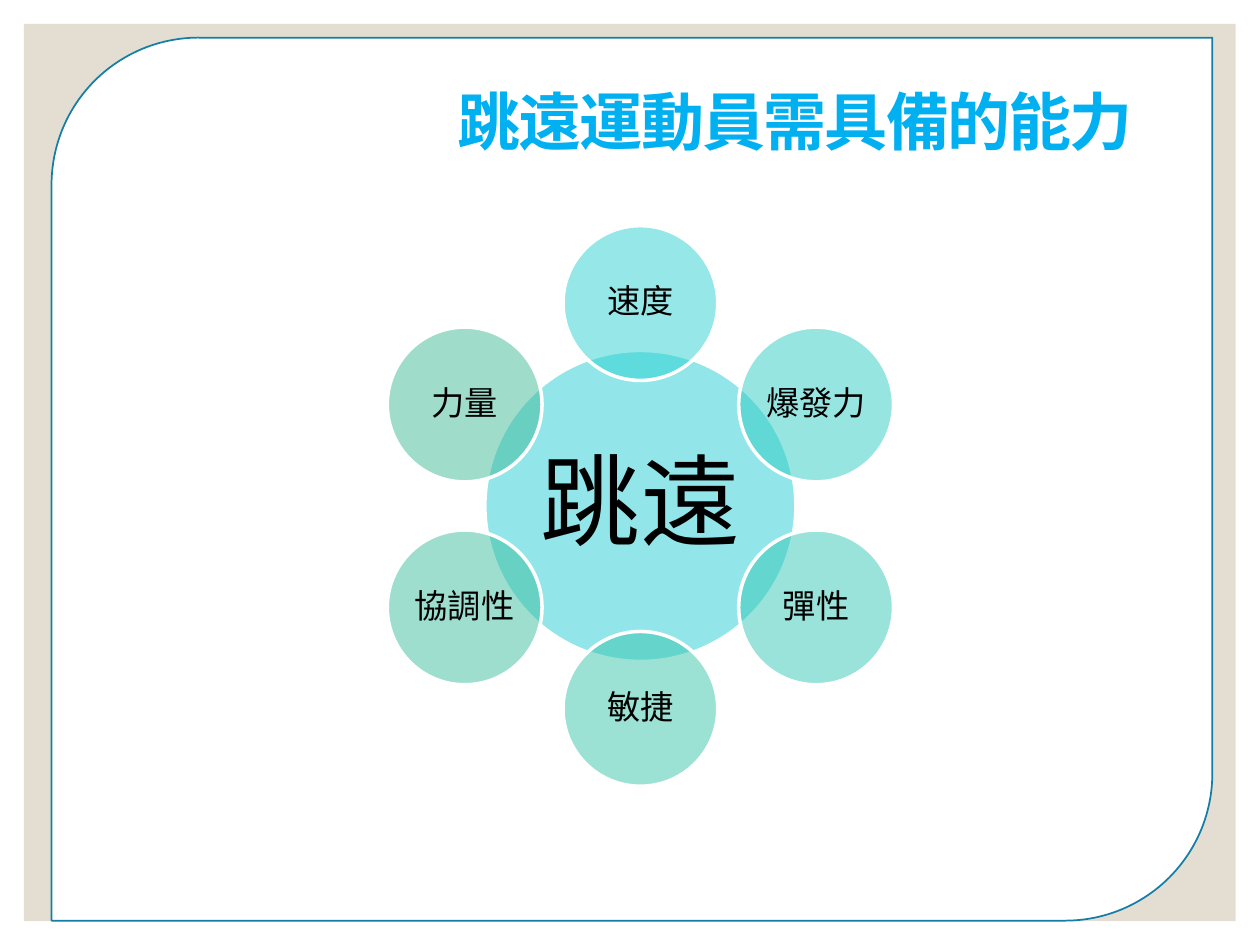
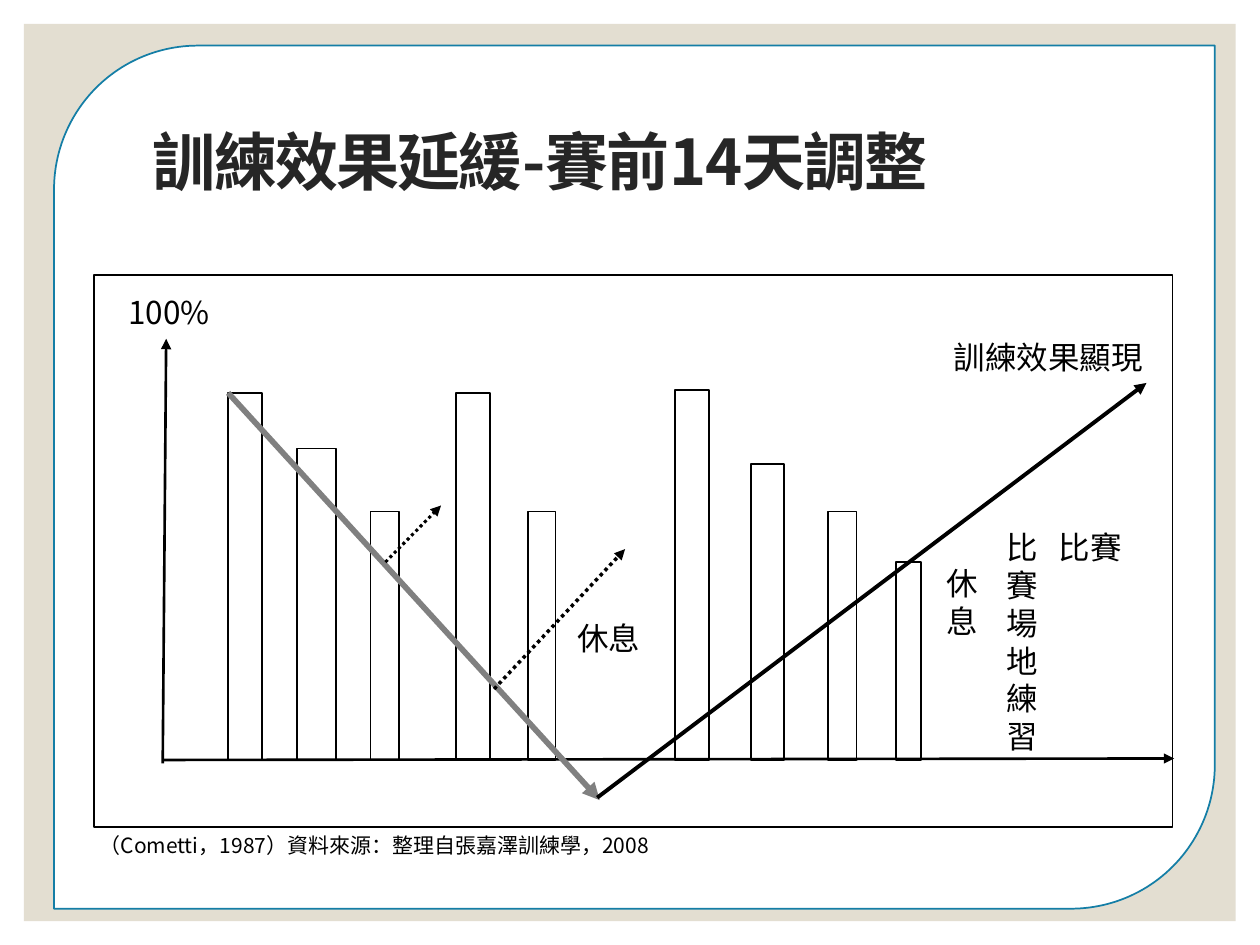
from math import cos, radians, sin

from lxml.etree import SubElement
from pptx import Presentation
from pptx.dml.color import RGBColor
from pptx.enum.dml import MSO_LINE
from pptx.enum.shapes import MSO_CONNECTOR, MSO_SHAPE
from pptx.enum.text import MSO_ANCHOR, MSO_AUTO_SIZE, PP_ALIGN
from pptx.oxml.ns import qn
from pptx.util import Cm, Pt

WHITE = RGBColor(0xFF, 0xFF, 0xFF)
BLACK = RGBColor(0x00, 0x00, 0x00)
SAND = RGBColor(0xE3, 0xDE, 0xD1)
EDGE = RGBColor(0x14, 0x7E, 0xA6)
SKY = RGBColor(0x00, 0xB0, 0xF0)
DARK = RGBColor(0x26, 0x26, 0x26)
GREY = RGBColor(0x80, 0x80, 0x80)
AQUA = RGBColor(0x27, 0xCE, 0xD7)
TINTS = [
    RGBColor(0x2C, 0xD2, 0xD1),
    RGBColor(0x30, 0xCD, 0xC3),
    RGBColor(0x35, 0xC8, 0xB7),
    RGBColor(0x39, 0xC4, 0xAB),
    RGBColor(0x3E, 0xBF, 0xA0),
    RGBColor(0x42, 0xBA, 0x97),
]
HEAD = "Noto Sans CJK SC"
BODY = "Noto Sans CJK TC"


def write(box, words, size, color=BLACK, face=BODY, asian=BODY, pad=0.13):
    frame = box.text_frame
    frame.text = words
    frame.word_wrap = True
    frame.auto_size = MSO_AUTO_SIZE.NONE
    frame.margin_left = frame.margin_right = Cm(pad)
    frame.margin_top = frame.margin_bottom = Cm(pad)
    para = frame.paragraphs[0]
    font = para.runs[0].font
    font.size = Pt(size)
    font.name = face
    font.color.rgb = color
    SubElement(para.runs[0]._r.rPr, qn("a:ea")).set("typeface", asian)
    return para


def shape(slide, kind, left, top, width, height, fill, line, weight):
    item = slide.shapes.add_shape(kind, Cm(left), Cm(top), Cm(width), Cm(height))
    item.shadow.inherit = False
    if fill is None:
        item.fill.background()
    else:
        item.fill.solid()
        item.fill.fore_color.rgb = fill
    if line is None:
        item.line.fill.background()
    else:
        item.line.color.rgb = line
        item.line.width = Pt(weight)
    return item


deck = Presentation()
deck.slide_width = Cm(25.4)
deck.slide_height = Cm(19.05)

pages = [
    ("跳遠運動員需具備的能力", SKY, (9.09, 1.8, 14.05, 1.52), (1.04, 0.76, 23.4, 17.8)),
    ("訓練效果延緩-賽前14天調整", DARK, (2.95, 2.36, 21.34, 2.01), (1.09, 0.92, 23.4, 17.4)),
]
for words, color, place, panel in pages:
    slide = deck.slides.add_slide(deck.slide_layouts[5])
    shape(slide, MSO_SHAPE.RECTANGLE, 0.48, 0.48, 24.43, 18.09, SAND, None, 0)
    shape(slide, MSO_SHAPE.ROUND_2_DIAG_RECTANGLE, *panel, WHITE, EDGE, 1)
    title = slide.shapes.title
    title.element.getparent().append(title.element)
    title.left, title.top, title.width, title.height = [Cm(n) for n in place]
    para = write(title, words, 36, color, HEAD, HEAD)
    para.alignment = PP_ALIGN.LEFT
    para.line_spacing = 0.83
    para.runs[0].font.bold = True
    para.runs[0]._r.rPr.set("spc", "-100")
    title.text_frame.vertical_anchor = MSO_ANCHOR.MIDDLE

skills, taper = deck.slides

MID_X, MID_Y, REACH = 12.91, 10.2, 4.09
discs = [("跳遠", MID_X, MID_Y, 6.27, AQUA, 57, 0.2)]
names = ["速度", "爆發力", "彈性", "敏捷", "協調性", "力量"]
for step, (name, tint) in enumerate(zip(names, TINTS)):
    turn = radians(step * 360 / len(names))
    x = MID_X + REACH * sin(turn)
    y = MID_Y - REACH * cos(turn)
    discs.append((name, x, y, 3.12, tint, 19, 0.08))

for name, x, y, size, tint, points, pad in discs:
    disc = shape(skills, MSO_SHAPE.OVAL, x - size / 2, y - size / 2, size, size, tint, WHITE, 2)
    shade = disc.fill._xPr.find(qn("a:solidFill"))[0]
    SubElement(shade, qn("a:alpha")).set("val", "50000")
    para = write(disc, name, points, face="Calibri", pad=pad)
    para.alignment = PP_ALIGN.CENTER
    para.line_spacing = 0.9
    disc.text_frame.vertical_anchor = MSO_ANCHOR.MIDDLE

shape(taper, MSO_SHAPE.RECTANGLE, 1.9, 5.54, 21.74, 11.13, None, BLACK, 1)

BASE = 15.32
bars = [
    (4.6, 7.92, 0.69),
    (5.99, 9.04, 0.79),
    (7.47, 10.31, 0.58),
    (9.19, 7.92, 0.69),
    (10.64, 10.31, 0.56),
    (13.61, 7.87, 0.69),
    (15.14, 9.35, 0.66),
    (16.69, 10.31, 0.58),
    (18.06, 11.33, 0.51),
]
for left, top, width in bars:
    shape(taper, MSO_SHAPE.RECTANGLE, left, top, width, BASE - top, None, BLACK, 1)

arrows = [
    (3.28, 15.39, 3.35, 6.83, BLACK, 1.5, False),
    (3.28, 15.32, 23.67, 15.29, BLACK, 1.5, False),
    (4.6, 7.92, 12.09, 16.13, GREY, 3.25, False),
    (12.04, 16.08, 23.11, 7.72, BLACK, 2.25, False),
    (7.77, 11.33, 8.89, 10.19, BLACK, 1.75, True),
    (9.96, 13.89, 12.6, 11.07, BLACK, 2, True),
]
for x1, y1, x2, y2, color, weight, dotted in arrows:
    arrow = taper.shapes.add_connector(MSO_CONNECTOR.STRAIGHT, Cm(x1), Cm(y1), Cm(x2), Cm(y2))
    arrow.line.color.rgb = color
    arrow.line.width = Pt(weight)
    if dotted:
        arrow.line.dash_style = MSO_LINE.ROUND_DOT
    SubElement(arrow.line._get_or_add_ln(), qn("a:tailEnd")).set("type", "triangle")
    SubElement(arrow.element.spPr, qn("a:effectLst"))

labels = [
    ("100%", 2.46, 5.77, 2.59, 1.04, 18),
    ("訓練效果顯現", 19.1, 6.68, 4.55, 1.14, 18),
    ("休息", 11.51, 12.34, 1.88, 1.14, 18),
    ("休息", 18.95, 11.25, 1.37, 2.01, 18),
    ("比賽場地練習", 20.17, 10.52, 1.04, 5.54, 18),
    ("比賽", 21.21, 10.52, 1.9, 1.14, 18),
    ("（Cometti，1987）資料來源：整理自張嘉澤訓練學，2008", 1.88, 16.66, 11.73, 0.86, 12),
]
for words, left, top, width, height, size in labels:
    box = taper.shapes.add_textbox(Cm(left), Cm(top), Cm(width), Cm(height))
    write(box, words, size)

deck.save("out.pptx")
